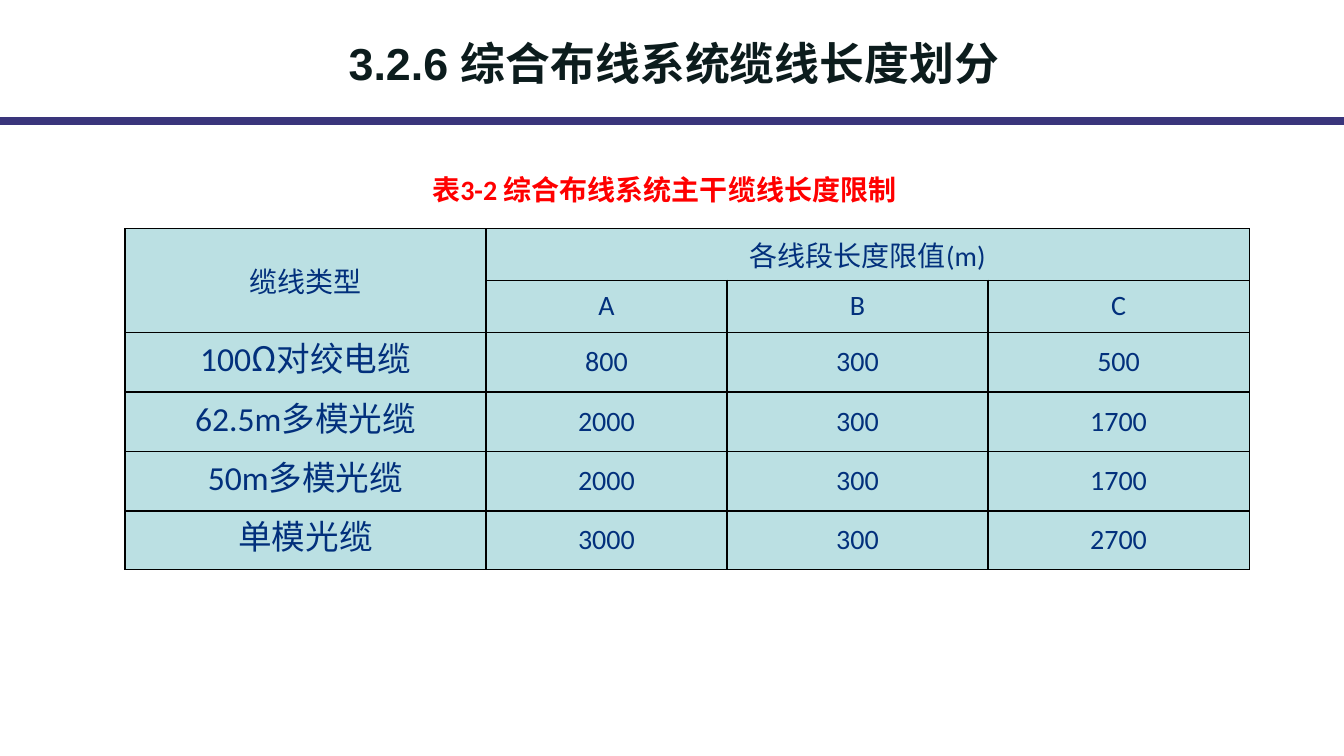
from lxml import etree
from pptx import Presentation
from pptx.dml.color import RGBColor
from pptx.enum.shapes import MSO_CONNECTOR
from pptx.enum.text import MSO_ANCHOR, PP_ALIGN
from pptx.oxml.ns import qn
from pptx.util import Inches, Pt

TOP, MIDDLE = MSO_ANCHOR.TOP, MSO_ANCHOR.MIDDLE
LEFT, CENTER = PP_ALIGN.LEFT, PP_ALIGN.CENTER
STRAIGHT = MSO_CONNECTOR.STRAIGHT

INK = RGBColor(0x0C, 0x1C, 0x1D)
RULE_BLUE = RGBColor(0x3A, 0x35, 0x7B)
TABLE_TEXT = RGBColor(0x02, 0x30, 0x7C)
TABLE_FILL = RGBColor(0xBB, 0xE0, 0xE3)
CAPTION_RED = RGBColor(0xFF, 0x00, 0x00)
BORDER_HEX = "000000"

CJK_FONT = "Noto Sans CJK SC"
SLIDE_WIDTH, SLIDE_HEIGHT = Inches(13.33), Inches(7.5)
COLUMN_WIDTHS = [Inches(w) for w in (3.58, 2.39, 2.59, 2.59)]
ROW_HEIGHTS = [Inches(h) for h in (0.51, 0.52, 0.59, 0.59, 0.59, 0.58)]

# Each cable: Latin part of its name, Chinese part, then limits A, B, C
CABLES = [
    ("100", "Ω对绞电缆", 800, 300, 500),
    ("62.5m", "多模光缆", 2000, 300, 1700),
    ("50m", "多模光缆", 2000, 300, 1700),
    ("", "单模光缆", 3000, 300, 2700),
]


def write(frame, *runs, size=20, color=TABLE_TEXT, bold=False, align=CENTER,
          line_spacing=None):
    """Fill the first paragraph with (text, font name) runs."""
    paragraph = frame.paragraphs[0]
    paragraph.alignment = align
    if line_spacing:
        paragraph.line_spacing = line_spacing
    for text, font_name in runs:
        run = paragraph.add_run()
        run.text = text
        run.font.name = font_name
        run.font.size = Pt(size)
        run.font.bold = bold
        run.font.color.rgb = color
        east_asian = etree.SubElement(run.font._element, qn("a:ea"))
        east_asian.set("typeface", CJK_FONT)


def add_text(slide, left, top, width, height, *runs, anchor=TOP, **text_format):
    box = slide.shapes.add_textbox(Inches(left), Inches(top),
                                   Inches(width), Inches(height))
    box.text_frame.word_wrap = True
    box.text_frame.vertical_anchor = anchor
    write(box.text_frame, *runs, **text_format)


def add_rule(slide, y):
    rule = slide.shapes.add_connector(STRAIGHT, 0, y, SLIDE_WIDTH, y)
    rule.line.color.rgb = RULE_BLUE
    rule.line.width = Pt(5.75)
    etree.SubElement(rule._element.spPr, qn("a:effectLst"))


def style_cell(cell):
    """Set margins, black borders and fill; borders must precede the fill."""
    cell.margin_left = cell.margin_right = Inches(0.07)
    cell.margin_top = cell.margin_bottom = 0
    properties = cell._tc.get_or_add_tcPr()
    for side in ("lnL", "lnR", "lnT", "lnB"):
        border = etree.SubElement(properties, qn(f"a:{side}"), w=str(Pt(1)))
        fill = etree.SubElement(border, qn("a:solidFill"))
        etree.SubElement(fill, qn("a:srgbClr"), val=BORDER_HEX)
    cell.fill.solid()
    cell.fill.fore_color.rgb = TABLE_FILL


def fill_cell(cell, *runs, anchor=MIDDLE, **text_format):
    cell.vertical_anchor = anchor
    write(cell.text_frame, *runs, **text_format)


def add_limits_table(slide, left, top):
    table = slide.shapes.add_table(
        len(ROW_HEIGHTS), len(COLUMN_WIDTHS), Inches(left), Inches(top),
        sum(COLUMN_WIDTHS), sum(ROW_HEIGHTS)).table
    table.first_row = table.horz_banding = False
    for column, width in zip(table.columns, COLUMN_WIDTHS):
        column.width = width
    for row, height in zip(table.rows, ROW_HEIGHTS):
        row.height = height
    for cell in table.iter_cells():
        style_cell(cell)

    table.cell(0, 0).merge(table.cell(1, 0))
    table.cell(0, 1).merge(table.cell(0, 3))
    fill_cell(table.cell(0, 0), ("缆线类型", "Calibri"))
    fill_cell(table.cell(0, 1), ("各线段长度限值(m)", "Calibri"))
    for column, segment in enumerate("ABC", start=1):
        fill_cell(table.cell(1, column), (segment, "Calibri"))

    for row, (latin, chinese, *limits) in enumerate(CABLES, start=2):
        name_runs = [(latin, "Calibri")] if latin else []
        fill_cell(table.cell(row, 0), *name_runs, (chinese, CJK_FONT),
                  anchor=TOP, size=24)
        for column, limit in enumerate(limits, start=1):
            fill_cell(table.cell(row, column), (str(limit), "Calibri"))


def main():
    presentation = Presentation()
    presentation.slide_width = SLIDE_WIDTH
    presentation.slide_height = SLIDE_HEIGHT
    slide = presentation.slides.add_slide(presentation.slide_layouts[6])

    add_rule(slide, round(SLIDE_HEIGHT * 0.16))
    add_text(slide, 3.36, 0.28, 7.06, 0.63,
             ("3.2.6 综合布线系统缆线长度划分", "Arial"),
             size=32, color=INK, bold=True, align=LEFT, line_spacing=1.05)
    add_limits_table(slide, 1.24, 2.27)
    add_text(slide, 3.31, 1.66, 6.56, 0.44,
             ("表3-2 综合布线系统主干缆线长度限制", "Calibri"),
             anchor=MIDDLE, color=CAPTION_RED, bold=True)

    presentation.save("out.pptx")


if __name__ == "__main__":
    main()
